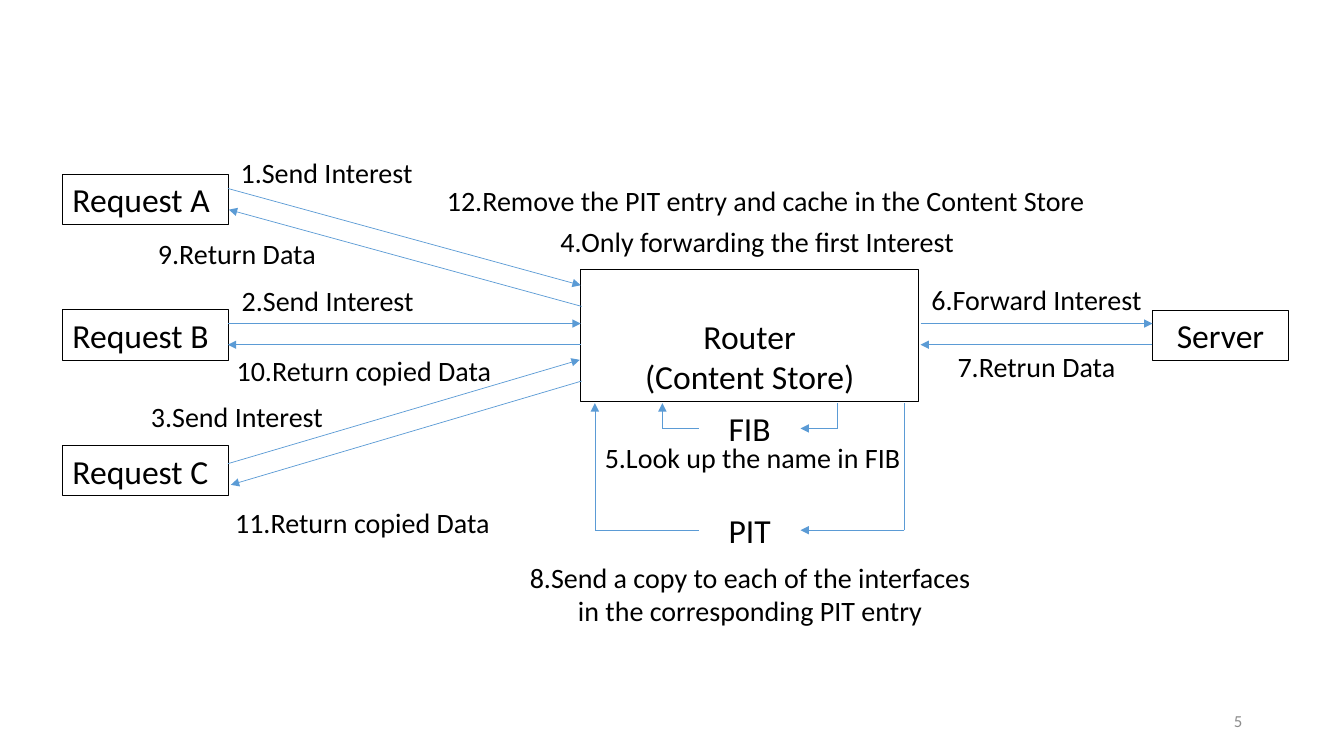
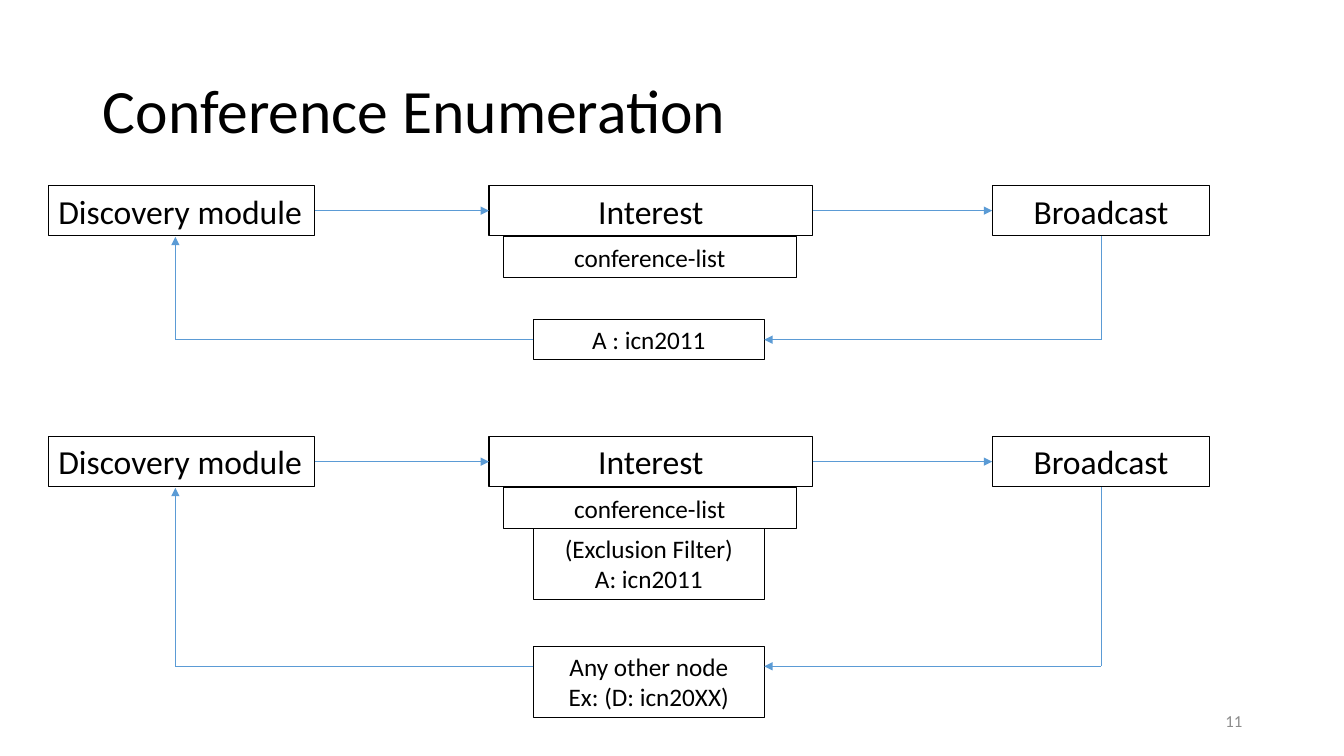
import pptx
import pptx.util
import pptx.dml.color
import pptx.enum.shapes
import pptx.enum.text
import pptx.oxml.ns
from lxml import etree

Inches, Pt = pptx.util.Inches, pptx.util.Pt
RGB = pptx.dml.color.RGBColor
ALIGN, ANCHOR = pptx.enum.text.PP_ALIGN, pptx.enum.text.MSO_ANCHOR
BLACK, BLUE, GREY = RGB(0, 0, 0), RGB(0x5B, 0x9B, 0xD5), RGB(0x8C, 0x8C, 0x8C)
FONT = "Calibri"
TOP, LEFT, BOTTOM, RIGHT = range(4)  # connection sites of a rectangle
TITLE_ONLY, BLANK = 5, 6

# Slide 1: packet flow
REQUESTS = ["Request A", "Request B", "Request C"]
ROUTER = ["Router", "(Content Store)"]
FLOW_LABELS = [  # text, left, top, width
    ("1.Send Interest", 2.26, 1.49, 1.96),
    ("2.Send Interest", 2.27, 2.76, 1.96),
    ("3.Send Interest", 1.37, 3.91, 1.96),
    ("4.Only forwarding the first Interest", 5.4, 2.18, 4.22),
    ("6.Forward Interest", 9.13, 2.75, 2.3),
    ("7.Retrun Data", 9.13, 3.42, 2.3),
    ("8.Send a copy to each of the interfaces in the corresponding PIT entry",
     5.13, 5.51, 4.62),
    ("9.Return Data", 1.37, 2.3, 1.96),
    ("10.Return copied Data", 2.23, 3.46, 2.76),
    ("11.Return copied Data", 2.21, 4.97, 2.77),
    ("12.Remove the PIT entry and cache in the Content Store", 4.32, 1.77, 6.55),
]
FLOW_ARROWS = [  # from, to
    ((2.26, 1.87), (5.76, 2.83)), ((5.77, 3.04), (2.27, 2.08)),
    ((2.26, 3.21), (5.76, 3.21)), ((5.76, 3.42), (2.26, 3.42)),
    ((2.26, 4.6), (5.75, 3.57)), ((5.77, 3.78), (2.29, 4.81)),
    ((9.13, 3.21), (11.43, 3.21)), ((11.43, 3.42), (9.13, 3.42)),
]
TABLES = [  # text, top, left end and right end of its loop
    ("FIB", 4, 6.57, 8.31),
    ("PIT", 5.01, 5.9, 8.97),
]

# Slide 2: two rounds of enumeration
STEPS = [  # text, left, width, alignment
    ("Discovery module", 0.48, 2.64, ALIGN.LEFT),
    ("Interest", 4.85, 3.21, ALIGN.CENTER),
    ("Broadcast", 9.84, 2.16, ALIGN.CENTER),
]
ROUNDS = [  # top, exclusion filter, top of response, response
    (1.84, [], 3.17, ["A : icn2011"]),
    (4.33, ["(Exclusion Filter)", "A: icn2011"], 6.41,
     ["Any other node", "Ex: (D: icn20XX)"]),
]


def write(tf, lines, size, align=ALIGN.CENTER, color=BLACK, anchor=ANCHOR.TOP):
    tf.word_wrap = True
    tf.vertical_anchor = anchor
    for i, line in enumerate(lines):
        p = tf.add_paragraph() if i else tf.paragraphs[0]
        p.alignment = align
        r = p.add_run()
        r.text = line
        r.font.name, r.font.size, r.font.color.rgb = FONT, Pt(size), color


def add_label(s, text, left, top, width, height=0.44, size=20, **style):
    sp = s.shapes.add_textbox(*map(Inches, (left, top, width, height)))
    write(sp.text_frame, [text], size, **style)
    return sp


def add_box(s, lines, left, top, width, height=0.5, size=24, **style):
    sp = s.shapes.add_shape(pptx.enum.shapes.MSO_SHAPE.RECTANGLE,
                            *map(Inches, (left, top, width, height)))
    sp.shadow.inherit = False
    sp.fill.background()
    sp.line.color.rgb, sp.line.width = BLACK, Pt(0.75)
    write(sp.text_frame, lines, size, **style)
    return sp


def add_line(s, start, end, arrow=True):
    """Draw a line; each end is an (x, y) point or a (shape, site) pair."""
    points = [(0, 0) if hasattr(e[0], "shape_id") else e for e in (start, end)]
    c = s.shapes.add_connector(pptx.enum.shapes.MSO_CONNECTOR.STRAIGHT,
                               *[Inches(v) for point in points for v in point])
    for e, connect in ((start, c.begin_connect), (end, c.end_connect)):
        if hasattr(e[0], "shape_id"):
            connect(*e)
    c.line.color.rgb, c.line.width = BLUE, Pt(0.5)
    qn = pptx.oxml.ns.qn
    if arrow:
        etree.SubElement(c.line._get_or_add_ln(), qn("a:tailEnd"), type="triangle")
    etree.SubElement(c._element.spPr, qn("a:effectLst"))


def add_loop(s, start, right, y, into, out, left, end_y):
    """Run down from start, left into a box, out of it, and up to end_y."""
    add_line(s, start, (right, y), arrow=False)
    add_line(s, (right, y), into)
    add_line(s, out, (left, y), arrow=False)
    add_line(s, (left, y), (left, end_y))


def add_slide(prs, layout, number):
    s = prs.slides.add_slide(prs.slide_layouts[layout])
    add_label(s, number, 9.42, 6.95, 3, 0.4, 12, align=ALIGN.RIGHT,
              color=GREY, anchor=ANCHOR.MIDDLE)
    return s


def build_flow(prs):
    s = add_slide(prs, BLANK, "5")
    for i, request in enumerate(REQUESTS):
        add_box(s, [request], 0.62, 1.73 + 1.345 * i, 1.65, align=ALIGN.LEFT)
    add_box(s, ROUTER, 5.76, 2.67, 3.35, 1.31, anchor=ANCHOR.BOTTOM)
    add_box(s, ["Server"], 11.43, 3.08, 1.35)
    for start, end in FLOW_ARROWS:
        add_line(s, start, end)
    for label in FLOW_LABELS:
        add_label(s, *label)
    add_label(s, "5.Look up the name in FIB", 5.9, 4.32, 3.4, align=ALIGN.LEFT)
    for text, top, left, right in TABLES:
        sp = add_label(s, text, 6.93, top, 1.01, 0.5, 24)
        add_loop(s, (right, 4), right, top + 0.25, (sp, RIGHT), (sp, LEFT), left, 4)


def build_enumeration(prs):
    s = add_slide(prs, TITLE_ONLY, "11")
    title = s.shapes.title
    title.left, title.top, title.width, title.height = map(
        Inches, (0.92, 0.4, 11.5, 1.45))
    write(title.text_frame, ["Conference Enumeration"], 44, ALIGN.LEFT,
          anchor=ANCHOR.MIDDLE)
    title.text_frame.paragraphs[0].line_spacing = 0.9

    for top, exclusion, response_top, response in ROUNDS:
        discovery, interest, broadcast = [
            add_box(s, [text], left, top, width, align=align)
            for text, left, width, align in STEPS]
        add_line(s, (discovery, RIGHT), (interest, LEFT))
        add_line(s, (interest, RIGHT), (broadcast, LEFT))
        add_box(s, ["conference-list"], 4.99, top + 0.51, 2.91, 0.4, 18)
        if exclusion:
            add_box(s, exclusion, 5.29, top + 0.91, 2.29, 0.71, 18)
        single = len(response) == 1
        sp = add_box(s, response, 5.29, response_top, 2.29, 0.4 if single else 0.71, 18)
        y = response_top + 0.2  # height of the first text line
        into, out = ((sp, RIGHT), (sp, LEFT)) if single else ((7.58, y), (5.29, y))
        add_loop(s, (broadcast, BOTTOM), 10.92, y, into, out, 1.74, top + 0.51)


def main():
    prs = pptx.Presentation()
    prs.slide_width, prs.slide_height = Inches(13.33), Inches(7.5)
    build_flow(prs)
    build_enumeration(prs)
    prs.save("out.pptx")


if __name__ == "__main__":
    main()
